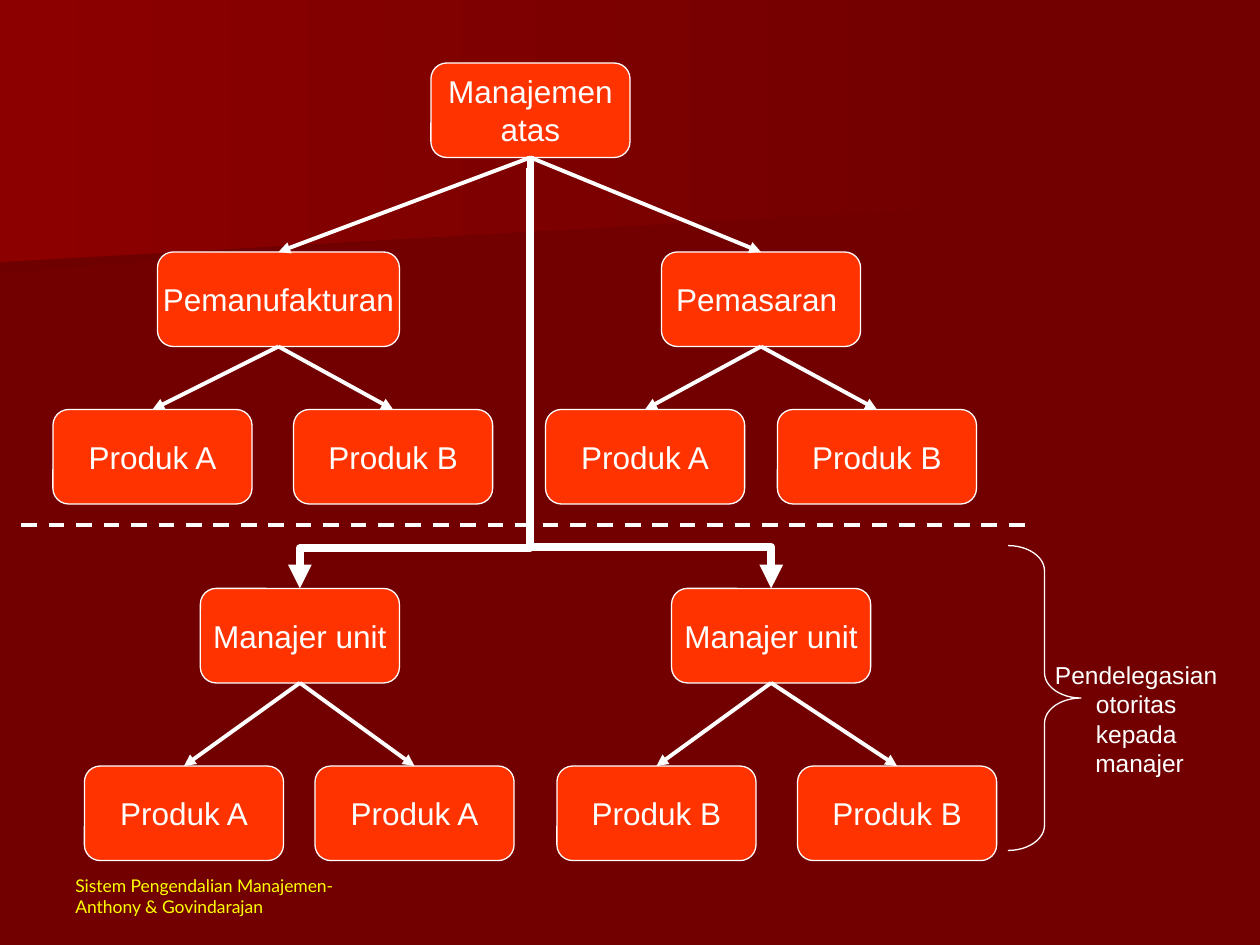
"""Build an organisation chart comparing functional and business-unit managers."""
from lxml import etree
from pptx import Presentation
from pptx.dml.color import RGBColor
from pptx.enum import dml, shapes, text
from pptx.oxml import ns
from pptx.util import Inches, Pt

colour = RGBColor.from_string
WHITE, ORANGE, DARK = "FFFFFF", "FF3300", "720000"
HEIGHT = 0.75


def add_block(page, left, top, width, height, wording, size, fill=None):
    block = page.shapes.add_shape(
        shapes.MSO_SHAPE.ROUNDED_RECTANGLE,
        Inches(left), Inches(top), Inches(width), Inches(height))
    block.shadow.inherit = False
    if fill:
        block.fill.solid()
        block.fill.fore_color.rgb = colour(fill)
        block.line.color.rgb = colour(WHITE)
        block.line.width = Pt(0.75)
    else:
        block.fill.background()
        block.line.fill.background()
    frame = block.text_frame
    frame.word_wrap = False
    frame.vertical_anchor = text.MSO_ANCHOR.MIDDLE
    frame.text = wording
    for para in frame.paragraphs:
        para.alignment = text.PP_ALIGN.CENTER
        para.font.name = "Arial"
        para.font.size = Pt(size)
        para.font.color.rgb = colour(WHITE)


def add_line(page, start, end, width=2.25, kind=shapes.MSO_CONNECTOR.STRAIGHT, arrow=True):
    line = page.shapes.add_connector(kind, *(Inches(value) for value in start + end))
    line.line.color.rgb = colour(WHITE)
    line.line.width = Pt(width)
    properties = line._element.spPr
    if arrow:
        etree.SubElement(line.line._get_or_add_ln(), ns.qn("a:tailEnd"), type="triangle")
    etree.SubElement(properties, ns.qn("a:effectLst"))
    return line


deck = Presentation()
deck.slide_width, deck.slide_height = Inches(10), Inches(7.5)
page = deck.slides.add_slide(deck.slide_layouts[6])
page.background.fill.solid()
page.background.fill.fore_color.rgb = colour(DARK)

bands = [
    ("6F0000", [(7.78, 1.53), (0, 2.17), (0, 1.01), (7.79, 1.01), (7.78, 1.28)]),
    ("8C0000", [(7.92, 1.62), (0, 2.08), (0, 0), (7.92, 0)]),
]
for shade, corners in bands:
    points = [(Inches(x), Inches(y)) for x, y in corners]
    builder = page.shapes.build_freeform(*points[0])
    builder.add_line_segments(points[1:], close=True)
    band = builder.convert_to_shape()
    band.shadow.inherit = False
    band.line.fill.background()
    band.fill.gradient()
    band.fill.gradient_angle = 0
    for stop, stop_colour, position in zip(band.fill.gradient_stops, (shade, DARK), (0, 1)):
        stop.color.rgb = colour(stop_colour)
        stop.position = position

footer = page.shapes.add_textbox(Inches(0.5), Inches(6.83), Inches(2.33), Inches(0.5))
footer.text_frame.word_wrap = True
footer.text_frame.vertical_anchor = text.MSO_ANCHOR.BOTTOM
para = footer.text_frame.paragraphs[0]
para.text = "Sistem Pengendalian Manajemen-Anthony & Govindarajan"
para.font.name = "Lato"
para.font.size = Pt(10)
para.font.color.rgb = colour("FFFF00")

levels = [
    (0.5, [(4.21, "Manajemen\natas")]),
    (2, [(2.21, "Pemanufakturan"), (6.04, "Pemasaran ")]),
    (3.25, [(1.21, "Produk A"), (3.12, "Produk B"), (5.12, "Produk A"), (6.96, "Produk B")]),
    (4.67, [(2.38, "Manajer unit"), (6.12, "Manajer unit")]),
    (6.08, [(1.46, "Produk A"), (3.29, "Produk A"), (5.21, "Produk B"), (7.12, "Produk B")]),
]
for top, members in levels:
    for center, wording in members:
        width = 1.92 if wording == "Pemanufakturan" else 1.58
        add_block(page, center - width / 2, top, width, HEIGHT, wording, 18, ORANGE)

for upper, lower in ((0, 1), (1, 2), (3, 4)):
    parent_top, parents = levels[upper]
    child_top, children = levels[lower]
    for index, (center, _) in enumerate(children):
        parent_center = parents[index // 2][0]
        add_line(page, (parent_center, parent_top + HEIGHT), (center, child_top))

divider = add_line(page, (0.17, 4.17), (8.17, 4.17), arrow=False)
divider.line.dash_style = dml.MSO_LINE.DASH

root = levels[0][1][0][0]
unit_top, units = levels[3]
for (center, _), start, rotation in zip(units, (1.33, 1.24), (90, 270)):
    drop, reach = unit_top - start, abs(center - root)
    left = (root + center - drop) / 2
    top = (start + unit_top - reach) / 2
    elbow = add_line(page, (left, top), (left + drop, top + reach), 4.5,
                     shapes.MSO_CONNECTOR.ELBOW)
    frame = elbow._element.spPr.find(ns.qn("a:xfrm"))
    frame.set("rot", str(rotation * 60000))
    if center > root:
        frame.set("flipH", "1")
    guides = elbow._element.spPr.find(ns.qn("a:prstGeom")).get_or_add_avLst()
    etree.SubElement(guides, ns.qn("a:gd"), name="adj1", fmla="val 90450")

add_block(page, 8.42, 4.58, 1.25, 2.25, "Pendelegasian \notoritas \nkepada \nmanajer", 14)

brace = page.shapes.add_shape(
    shapes.MSO_SHAPE.RIGHT_BRACE, Inches(8), Inches(4.33), Inches(0.58), Inches(2.42))
brace.shadow.inherit = False
brace.adjustments[0] = 0.345
brace.fill.background()
brace.line.color.rgb = colour(WHITE)
brace.line.width = Pt(0.75)

deck.save("out.pptx")
